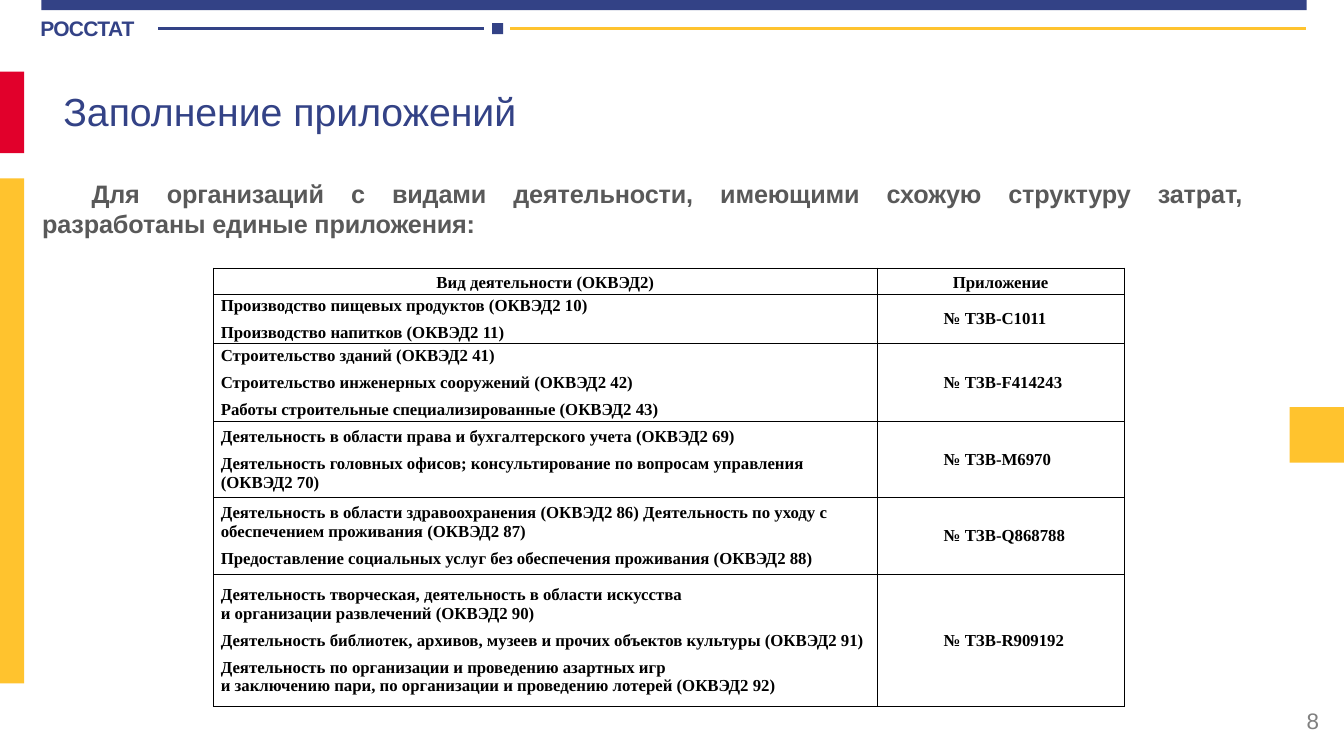
from lxml import etree
from pptx import Presentation
from pptx.dml.color import RGBColor
from pptx.enum.shapes import MSO_CONNECTOR, MSO_SHAPE
from pptx.enum.text import MSO_ANCHOR, PP_ALIGN
from pptx.oxml.ns import qn
from pptx.util import Inches, Pt

COLORS = {
    "navy": "334286",
    "red": "E1002B",
    "yellow": "FFC32E",
    "grey": "595959",
    "number": "808080",
    "black": "000000",
}

COLUMN_WIDTHS = [6.58, 2.45]
ROW_HEIGHTS = [0.26, 0.49, 0.77, 0.76, 0.76, 1.31]
HEADERS = ["Вид деятельности (ОКВЭД2)", "Приложение"]
ACTIVITIES = [
    (["Производство пищевых продуктов (ОКВЭД2 10)",
      "Производство напитков (ОКВЭД2 11)"], "№ ТЗВ-C1011"),
    (["Строительство зданий (ОКВЭД2 41)",
      "Строительство инженерных сооружений (ОКВЭД2 42)",
      "Работы строительные специализированные (ОКВЭД2 43)"], "№ ТЗВ-F414243"),
    (["Деятельность в области права и бухгалтерского учета (ОКВЭД2 69)",
      "Деятельность головных офисов; консультирование по вопросам управления (ОКВЭД2 70)"],
     "№ ТЗВ-M6970"),
    (["Деятельность в области здравоохранения (ОКВЭД2 86) "
      "Деятельность по уходу с обеспечением проживания (ОКВЭД2 87)",
      "Предоставление социальных услуг без обеспечения проживания (ОКВЭД2 88)"],
     "№ ТЗВ-Q868788"),
    (["Деятельность творческая, деятельность в области искусства\n"
      "и организации развлечений (ОКВЭД2 90)",
      "Деятельность библиотек, архивов, музеев и прочих объектов культуры (ОКВЭД2 91)",
      "Деятельность по организации и проведению азартных игр\n"
      "и заключению пари, по организации и проведению лотерей (ОКВЭД2 92)"],
     "№ ТЗВ-R909192"),
]


def color(name):
    return RGBColor.from_string(COLORS[name])


def apply(target, values):
    for name, value in values.items():
        setattr(target, name, value)


def format_para(para, size, color_name, font="Arial", bold=False, spacing=0, **values):
    """Format a paragraph; spacing is between characters, in points."""
    apply(para, values)
    for span in para.runs:
        apply(span.font, {"size": Pt(size), "name": font, "bold": bold})
        span.font.color.rgb = color(color_name)
        if spacing:
            span.font._element.set("spc", str(round(spacing * 100)))


def add_block(page, left, top, width, height, color_name):
    block = page.shapes.add_shape(MSO_SHAPE.RECTANGLE, Inches(left), Inches(top),
                                  Inches(width), Inches(height))
    block.shadow.inherit = False
    block.fill.solid()
    block.fill.fore_color.rgb = color(color_name)
    block.line.fill.background()


def add_rule(page, left, right, top, color_name):
    rule = page.shapes.add_connector(MSO_CONNECTOR.STRAIGHT, Inches(left), Inches(top),
                                     Inches(right), Inches(top))
    rule.line.color.rgb = color(color_name)
    rule.line.width = Pt(2)
    etree.SubElement(rule._element.spPr, qn("a:effectLst"))


def add_text(page, left, top, width, height, text, frame_values=None, **values):
    box = page.shapes.add_textbox(Inches(left), Inches(top), Inches(width), Inches(height))
    frame = box.text_frame
    apply(frame, {"word_wrap": True, **(frame_values or {})})
    para = frame.paragraphs[0]
    para.text = text
    format_para(para, **values)
    return para


def add_borders(cell):
    properties = cell._tc.get_or_add_tcPr()
    for position, side in enumerate(("lnL", "lnR", "lnT", "lnB")):
        border = etree.Element(qn(f"a:{side}"), w=str(Pt(1)))
        fill = etree.SubElement(border, qn("a:solidFill"))
        etree.SubElement(fill, qn("a:srgbClr"), val=COLORS["black"])
        properties.insert(position, border)


def fill_cell(cell, texts, margin=0.0, **values):
    cell.fill.background()
    add_borders(cell)
    apply(cell, {"margin_left": Inches(0.07), "margin_right": Inches(0.07),
                 "margin_top": 0, "margin_bottom": 0,
                 "vertical_anchor": MSO_ANCHOR.MIDDLE})
    frame = cell.text_frame
    for index, text in enumerate(texts):
        para = frame.add_paragraph() if index else frame.paragraphs[0]
        para.text = text
        if margin:
            para._p.get_or_add_pPr().set("marL", str(Inches(margin)))
        if index:
            para.space_before = Pt(6)
        format_para(para, 12, "black", "Times New Roman", True, **values)


def add_activity_table(page):
    table = page.shapes.add_table(len(ROW_HEIGHTS), len(COLUMN_WIDTHS),
                                  Inches(2.12), Inches(2.66),
                                  Inches(sum(COLUMN_WIDTHS)),
                                  Inches(sum(ROW_HEIGHTS))).table
    apply(table, {"first_row": False, "horz_banding": False})
    for column, width in zip(table.columns, COLUMN_WIDTHS):
        column.width = Inches(width)
    for row, height in zip(table.rows, ROW_HEIGHTS):
        row.height = Inches(height)
    for index, header in enumerate(HEADERS):
        fill_cell(table.cell(0, index), [header],
                  alignment=PP_ALIGN.CENTER, line_spacing=1.15)
    for index, (activities, appendix) in enumerate(ACTIVITIES, start=1):
        fill_cell(table.cell(index, 0), activities)
        fill_cell(table.cell(index, 1), [appendix], margin=0.59)


def main():
    deck = Presentation()
    apply(deck, {"slide_width": Inches(13.33), "slide_height": Inches(7.5)})
    page = deck.slides.add_slide(deck.slide_layouts[6])

    # Header band and rules
    add_block(page, 0.41, 0, 12.55, 0.1, "navy")
    add_text(page, 0.4, 0.15, 1.15, 0.3, "РОССТАТ",
             {"margin_left": 0, "margin_right": 0, "margin_top": 0, "margin_bottom": 0},
             size=15, color_name="navy", bold=True, spacing=-0.5)
    add_rule(page, 1.57, 4.8, 0.28, "navy")
    add_block(page, 4.88, 0.23, 0.11, 0.11, "navy")
    add_rule(page, 5.06, 12.95, 0.28, "yellow")

    # Side accents
    add_block(page, 0, 0.71, 0.24, 0.81, "red")
    add_block(page, 0, 1.77, 0.24, 5.01, "yellow")
    add_block(page, 12.79, 4.04, 0.54, 0.55, "yellow")

    # Title, introduction and page number
    middle = {"vertical_anchor": MSO_ANCHOR.MIDDLE}
    add_text(page, 0.53, 0.77, 12.42, 0.65, "Заполнение приложений", middle,
             size=28, color_name="navy")
    intro = add_text(page, 0.32, 1.72, 12.1, 0.8,
                     "Для организаций с видами деятельности, имеющими схожую "
                     "структуру затрат, разработаны единые приложения:",
                     size=18, color_name="grey", bold=True, spacing=-0.1,
                     alignment=PP_ALIGN.JUSTIFY)
    intro._p.get_or_add_pPr().set("indent", str(Inches(0.49)))
    add_text(page, 10.18, 6.95, 3, 0.4, "8", middle,
             size=16, color_name="number", alignment=PP_ALIGN.RIGHT)

    add_activity_table(page)
    deck.save("out.pptx")


if __name__ == "__main__":
    main()
